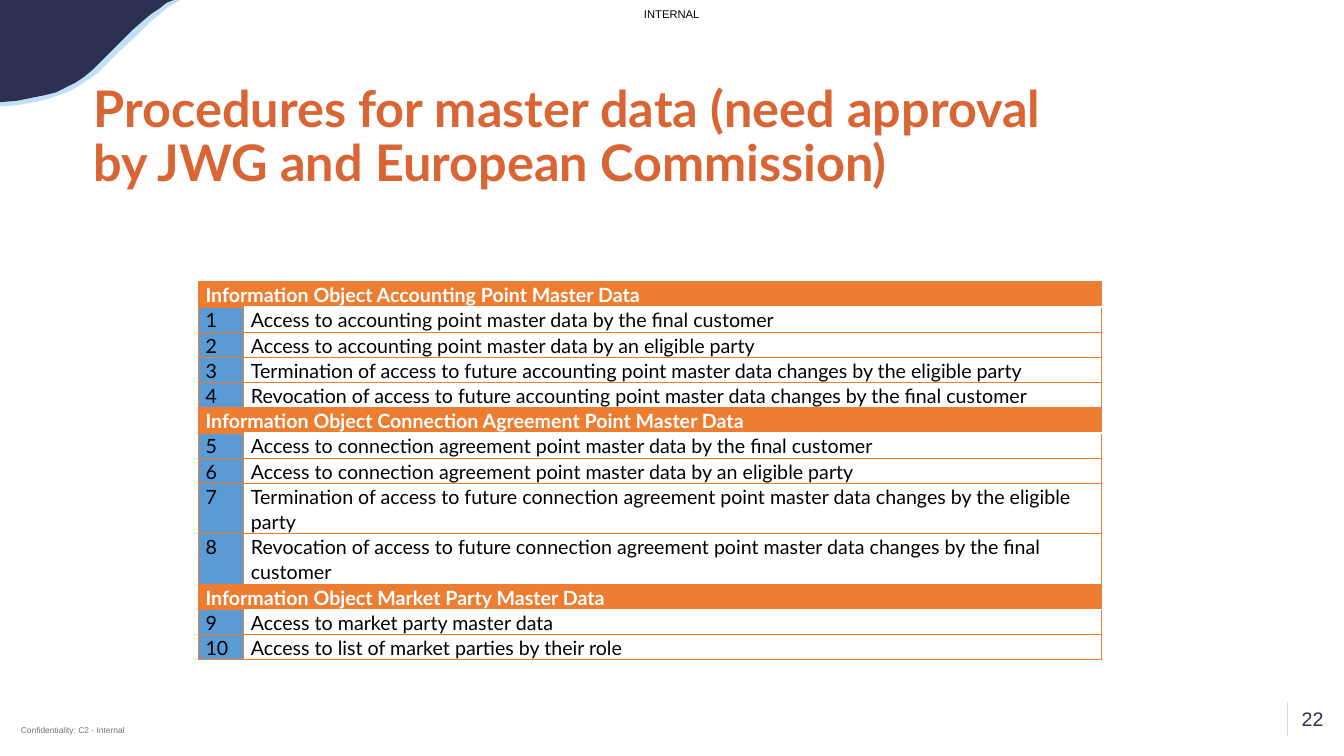
"""Build the slide listing the master data procedures."""
import pptx
import pptx.dml.color
import pptx.enum.shapes
import pptx.enum.text
import pptx.oxml
import pptx.oxml.ns
import pptx.util

Pt = pptx.util.Pt
Align = pptx.enum.text.PP_ALIGN
Anchor = pptx.enum.text.MSO_ANCHOR

NAVY, SKY, ORANGE, BLUE = "2C3051", "C1E0F7", "ED7D31", "5B9BD5"
BLACK, WHITE = "000000", "FFFFFF"

SECTIONS = {
    "Information Object Accounting Point Master Data": [
        "Access to accounting point master data by the final customer",
        "Access to accounting point master data by an eligible party",
        "Termination of access to future accounting point master data changes by the eligible party",
        "Revocation of access to future accounting point master data changes by the final customer",
    ],
    "Information Object Connection Agreement Point Master Data": [
        "Access to connection agreement point master data by the final customer",
        "Access to connection agreement point master data by an eligible party",
        "Termination of access to future connection agreement point master data changes by the eligible party",
        "Revocation of access to future connection agreement point master data changes by the final customer",
    ],
    "Information Object Market Party Master Data": [
        "Access to market party master data",
        "Access to list of market parties by their role",
    ],
}

SKY_WAVE = [
    (128.9, 0), (123.8, 2.9), (118.8, 6.5), (113, 10.8), (106.6, 15.8), (98.6, 23.8),
    (85, 37.4), (77.8, 43.9), (72.7, 49), (69.1, 52.6), (63.4, 56.9), (56.9, 61.2),
    (49.7, 64.8), (41.8, 68.4), (33.1, 71.3), (23.8, 73.4), (13, 74.9), (0, 76.3),
]
NAVY_WAVE = [
    (123.8, 0), (118.8, 2.2), (113.8, 5.8), (108, 10.1), (101.5, 15.1), (94.3, 22.3),
    (81.4, 35.3), (74.2, 42.5), (69.1, 46.8), (65.5, 50.4), (60.5, 54.7), (54, 59),
    (47.5, 61.9), (39.6, 65.5), (31.7, 68.4), (22.3, 69.8), (12.2, 72), (0, 72.7),
]


def rgb(value):
    """Turn a hex string into a colour."""
    return pptx.dml.color.RGBColor.from_string(value)


def apply(target, formats):
    """Set every attribute of a dict on the target."""
    for name, value in formats.items():
        setattr(target, name, value)


class SlideBuilder:
    """Hold the style and the current slide."""

    title_font = "Lato"
    small_font = "Arial"
    cell_paragraph = {"line_spacing": 1.07, "space_after": Pt(8)}
    cell_margins = {"margin_left": Pt(5.04), "margin_right": Pt(5.04), "margin_top": 0, "margin_bottom": 0}

    def __init__(self, slide):
        """Keep the slide to draw on."""
        self.slide = slide

    def paragraph(self, frame, text, font, size, color, bold=False, **paragraph_formats):
        """Put one formatted paragraph into a text frame."""
        paragraph = frame.paragraphs[0]
        apply(paragraph, paragraph_formats)
        run = paragraph.add_run()
        run.text = text
        apply(run.font, {"name": font, "size": Pt(size), "bold": bold})
        run.font.color.rgb = rgb(color)

    def text(self, box, frame_formats, *content, **paragraph_formats):
        """Add a text box."""
        frame = self.slide.shapes.add_textbox(*map(Pt, box)).text_frame
        apply(frame, frame_formats)
        self.paragraph(frame, *content, **paragraph_formats)

    def label(self, box, *content):
        """Add a small one-line text without margins."""
        margins = dict.fromkeys(("margin_left", "margin_right", "margin_top", "margin_bottom"), 0)
        self.text(box, {"word_wrap": False, **margins}, *content)

    def rule(self, x, top, bottom, color, width):
        """Add a vertical line."""
        straight = pptx.enum.shapes.MSO_CONNECTOR.STRAIGHT
        line = self.slide.shapes.add_connector(straight, Pt(x), Pt(top), Pt(x), Pt(bottom))
        line.line.color.rgb = rgb(color)
        line.line.width = Pt(width)
        properties = line._element.spPr
        properties.append(properties.makeelement(pptx.oxml.ns.qn("a:effectLst"), {}))

    def corner(self, wave, color):
        """Fill the top left corner up to a wave."""
        builder = self.slide.shapes.build_freeform(0, 0, scale=Pt(1))
        builder.add_line_segments(wave, close=True)
        shape = builder.convert_to_shape()
        shape.shadow.inherit = False
        shape.fill.solid()
        shape.fill.fore_color.rgb = rgb(color)
        shape.line.fill.background()

    def borders(self, cell, top):
        """Draw the four borders of a cell."""
        for side, color in zip("LRTB", (ORANGE, ORANGE, top, ORANGE)):
            cell._tc.get_or_add_tcPr().append(pptx.oxml.parse_xml(
                f'<a:ln{side} {pptx.oxml.ns.nsdecls("a")} w="{Pt(1)}"><a:solidFill>'
                f'<a:srgbClr val="{color}"/></a:solidFill></a:ln{side}>'))

    def cell(self, cell, text, color, fill=None, bold=False, top=ORANGE):
        """Format and fill a table cell."""
        apply(cell, self.cell_margins)
        self.borders(cell, top)
        if fill:
            cell.fill.solid()
            cell.fill.fore_color.rgb = rgb(fill)
        else:
            cell.fill.background()
        self.paragraph(cell.text_frame, text, self.title_font, 14, color, bold, **self.cell_paragraph)

    def table(self, left, top, widths, row_height, sections):
        """Add the table of numbered procedures grouped by section."""
        count = sum(1 + len(procedures) for procedures in sections.values())
        table = self.slide.shapes.add_table(
            count, 2, Pt(left), Pt(top), Pt(sum(widths)), Pt(row_height * count)).table
        apply(table, {"first_row": False, "horz_banding": False})
        for column, width in zip(table.columns, widths):
            column.width = Pt(width)
        row, number = 0, 0
        for section, procedures in sections.items():
            heading, covered = table.cell(row, 0), table.cell(row, 1)
            heading.merge(covered)
            self.cell(heading, section, WHITE, ORANGE, bold=True)
            self.borders(covered, ORANGE)
            for position, procedure in enumerate(procedures):
                row, number = row + 1, number + 1
                self.cell(table.cell(row, 0), str(number), BLACK, BLUE)
                self.cell(table.cell(row, 1), procedure, BLACK, top=ORANGE if position else WHITE)
            row += 1


def main():
    """Build and save the slide."""
    deck = pptx.Presentation()
    apply(deck, {"slide_width": Pt(960), "slide_height": Pt(540)})
    page = SlideBuilder(deck.slides.add_slide(deck.slide_layouts[6]))
    page.label((460, 5, 42, 9.4), "INTERNAL", page.small_font, 8, BLACK)
    page.label((15, 517.7, 76.3, 7.2), "Confidentiality: C2 - Internal", page.small_font, 6, "737373")
    page.text((918.7, 501.1, 33.8, 24.5), {"word_wrap": False},
              "22", page.small_font, 14, NAVY, alignment=Align.RIGHT)
    page.rule(919.4, 501.1, 525.6, SKY, 0.5)
    page.corner(SKY_WAVE, SKY)
    page.corner(NAVY_WAVE, NAVY)
    page.text((59.8, 60.5, 717.8, 76.3), {"word_wrap": True, "vertical_anchor": Anchor.MIDDLE},
              "Procedures for master data (need approval by JWG and European Commission)",
              page.title_font, 36, "D86533", True, line_spacing=0.9)
    page.table(141.8, 201.3, (32.4, 612.7), 17.9, SECTIONS)
    deck.save("out.pptx")


if __name__ == "__main__":
    main()
